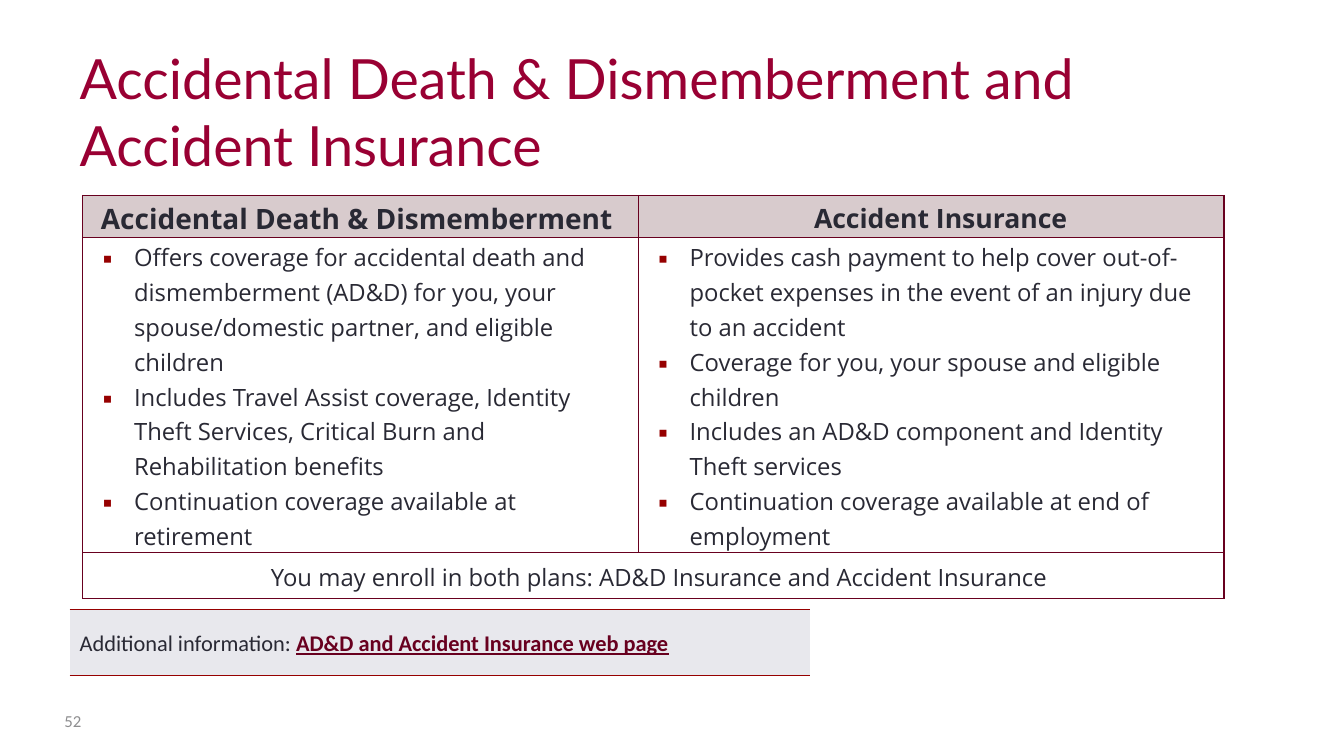
from lxml.etree import SubElement
from pptx import Presentation
from pptx.dml.color import RGBColor
from pptx.enum.text import MSO_ANCHOR, PP_ALIGN
from pptx.oxml.ns import qn
from pptx.util import Inches, Pt

INK, WINE, RED = "292934", "68001F", "960000"
HEADER_FILL, NOTE_FILL = "D8CBCD", "E8E8ED"
DEATH_POINTS = [
    "Offers coverage for accidental death and dismemberment (AD&D) for you, "
    "your spouse/domestic partner, and eligible children",
    "Includes Travel Assist coverage, Identity Theft Services, Critical Burn "
    "and Rehabilitation benefits",
    "Continuation coverage available at retirement",
]
ACCIDENT_POINTS = [
    "Provides cash payment to help cover out-of-pocket expenses in the event "
    "of an injury due to an accident",
    "Coverage for you, your spouse and eligible children",
    "Includes an AD&D component and Identity Theft services",
    "Continuation coverage available at end of employment",
]


def color(value):
    return RGBColor.from_string(value)


def style_span(span, size, font="Open Sans", ink=INK, bold=False):
    span.font.size = Pt(size)
    span.font.name = font
    span.font.color.rgb = color(ink)
    span.font.bold = bold


def set_indent(para, left, first=0):
    properties = para._p.get_or_add_pPr()
    properties.set("marL", str(Inches(left)))
    properties.set("indent", str(Inches(first)))


def add_bullet(para):
    set_indent(para, 0.44, -0.31)
    properties = para._p.get_or_add_pPr()
    bullet_color = SubElement(properties, qn("a:buClr"))
    SubElement(bullet_color, qn("a:srgbClr"), val=RED)
    SubElement(properties, qn("a:buFont"), typeface="Open Sans")
    SubElement(properties, qn("a:buChar"), char="▪")


def set_borders(cell, line_color, sides="LRTB"):
    """Draw 1 pt lines on the given sides and clear the others."""
    properties = cell._tc.get_or_add_tcPr()
    for side in "LRTB":
        line = SubElement(properties, qn(f"a:ln{side}"), w=str(Pt(1)))
        if side in sides:
            fill = SubElement(line, qn("a:solidFill"))
            SubElement(fill, qn("a:srgbClr"), val=line_color)
        else:
            SubElement(line, qn("a:noFill"))


def fill_cell(cell, value=None):
    if value:
        cell.fill.solid()
        cell.fill.fore_color.rgb = color(value)
    else:
        cell.fill.background()


def add_plain_table(page, left, top, widths, heights):
    frame = page.shapes.add_table(
        len(heights), len(widths), Inches(left), Inches(top),
        Inches(sum(widths)), Inches(sum(heights)))
    table = frame.table
    table.first_row = table.horz_banding = False
    for column, width in zip(table.columns, widths):
        column.width = Inches(width)
    for row, height in zip(table.rows, heights):
        row.height = Inches(height)
    return table


def write_centered(cell, text, size, indent=0, bold=False):
    cell.vertical_anchor = MSO_ANCHOR.MIDDLE
    para = cell.text_frame.paragraphs[0]
    para.text = text
    set_indent(para, indent)
    para.alignment = PP_ALIGN.CENTER
    para.line_spacing = 1.07
    style_span(para.runs[0], size, bold=bold)


def write_bullets(cell, points):
    cell.text_frame.text = "\n".join(points)
    for para in cell.text_frame.paragraphs:
        add_bullet(para)
        para.line_spacing = 1.07
        style_span(para.runs[0], 17)


def add_plan_table(page):
    table = add_plain_table(page, 0.82, 1.94, [5.51, 5.81], [0.42, 3.12, 0.46])
    for cell in table.iter_cells():
        cell.margin_left = cell.margin_right = Inches(0.07)
        cell.margin_top, cell.margin_bottom = Inches(0.01), 0
        set_borders(cell, WINE)
        fill_cell(cell)
    headers = [("Accidental Death & Dismemberment ", 20, 0),
               ("Accident Insurance", 19, 0.19)]
    for column, (text, size, indent) in enumerate(headers):
        cell = table.cell(0, column)
        fill_cell(cell, HEADER_FILL)
        write_centered(cell, text, size, indent, bold=True)
    for column, points in enumerate([DEATH_POINTS, ACCIDENT_POINTS]):
        write_bullets(table.cell(1, column), points)
    footer = table.cell(2, 0)
    footer.merge(table.cell(2, 1))
    write_centered(
        footer, "You may enroll in both plans: AD&D Insurance and Accident Insurance",
        17, 0.12)


def add_information_bar(page):
    cell = add_plain_table(page, 0.69, 6.05, [7.34], [0.65]).cell(0, 0)
    set_borders(cell, RED, "TB")
    fill_cell(cell, NOTE_FILL)
    cell.vertical_anchor = MSO_ANCHOR.MIDDLE
    para = cell.text_frame.paragraphs[0]
    para.line_spacing = 1.1
    label, web_page = para.add_run(), para.add_run()
    label.text = "Additional information: "
    web_page.text = "AD&D and Accident Insurance web page"
    style_span(label, 16, "Calibri")
    style_span(web_page, 16, "Calibri", WINE, bold=True)
    web_page.font.underline = True


def set_title(page, text):
    title = page.shapes.title
    title.left, title.top = Inches(0.69), Inches(0.56)
    title.width, title.height = Inches(11.94), Inches(1.25)
    title.text_frame.text = text
    title.text_frame.vertical_anchor = MSO_ANCHOR.BOTTOM
    para = title.text_frame.paragraphs[0]
    para.alignment = PP_ALIGN.LEFT
    style_span(para.runs[0], 39.6, "Lato", "990033")


def add_page_number(page, number):
    box = page.shapes.add_textbox(
        Inches(0.54), Inches(6.95), Inches(0.56), Inches(0.4))
    box.text_frame.word_wrap = True
    box.text_frame.vertical_anchor = MSO_ANCHOR.MIDDLE
    box.text_frame.text = number
    style_span(box.text_frame.paragraphs[0].runs[0], 12, "Calibri", "8E8E90")


def main():
    deck = Presentation()
    deck.slide_width, deck.slide_height = Inches(13.33), Inches(7.5)
    page = deck.slides.add_slide(deck.slide_layouts[5])
    set_title(page, "Accidental Death & Dismemberment and Accident Insurance")
    add_page_number(page, "52")
    add_information_bar(page)
    add_plan_table(page)
    deck.save("out.pptx")


if __name__ == "__main__":
    main()
